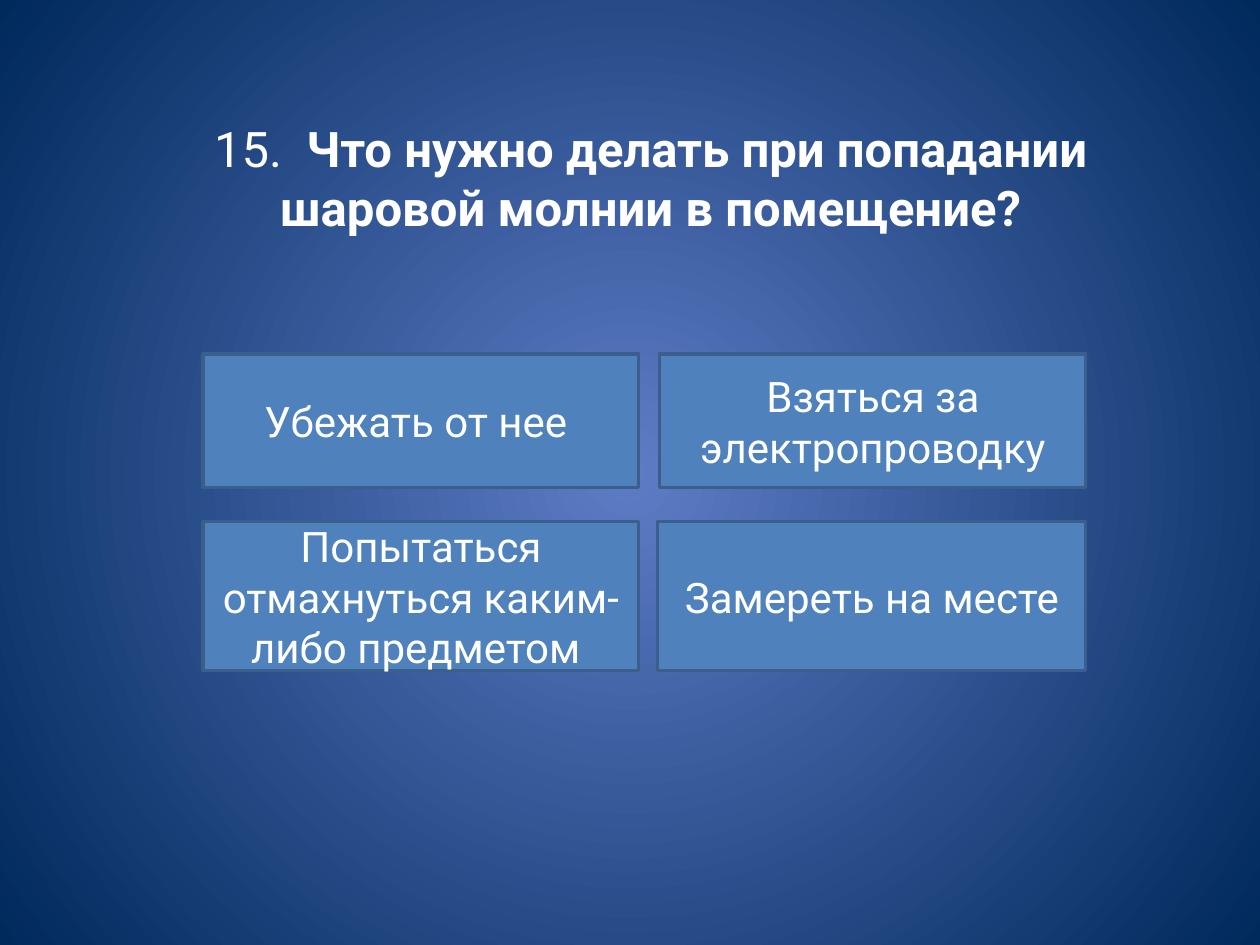
from lxml import etree
from pptx import Presentation
from pptx.dml.color import RGBColor
from pptx.enum.shapes import MSO_SHAPE
from pptx.enum.text import MSO_ANCHOR, PP_ALIGN
from pptx.oxml.ns import qn
from pptx.util import Emu, Pt

RECTANGLE = MSO_SHAPE.RECTANGLE
MIDDLE = MSO_ANCHOR.MIDDLE
CENTER = PP_ALIGN.CENTER

EMU_PER_PX = 914400 / 126
COLORS = {
    "glow": "5E7CC5",
    "edge": "00295C",
    "answer": "4F81BD",
    "border": "3A5F8C",
    "text": "FFFFFF",
}


def px(length):
    return Emu(round(length * EMU_PER_PX))


def rgb(key):
    return RGBColor.from_string(COLORS[key])


class QuizSlide:
    font = "Roboto"
    border_width = Pt(1.75)

    def __init__(self, deck):
        self.slide = deck.slides.add_slide(deck.slide_layouts[6])

    def background(self, center, edge):
        """Fill the slide with a gradient that spreads in circles from its middle."""
        fill = self.slide.background.fill
        fill.gradient()
        for stop, key in zip(fill.gradient_stops, (center, edge)):
            stop.color.rgb = rgb(key)
        gradient = self.slide.element.find(".//" + qn("a:gradFill"))
        gradient.remove(gradient.find(qn("a:lin")))
        circle = etree.SubElement(gradient, qn("a:path"), {"path": "circle"})
        etree.SubElement(circle, qn("a:fillToRect"), dict.fromkeys("ltrb", "50000"))

    def add_text(self, frame, size, runs):
        """Put (text, bold) runs into one centred paragraph."""
        frame.word_wrap = True
        frame.vertical_anchor = MIDDLE
        paragraph = frame.paragraphs[0]
        paragraph.alignment = CENTER
        for text, bold in runs:
            run = paragraph.add_run()
            run.text = text
            style = {"name": self.font, "size": Pt(size), "bold": bold}
            for attribute, value in style.items():
                setattr(run.font, attribute, value)
            run.font.color.rgb = rgb("text")

    def question(self, box, runs):
        title = self.slide.shapes.add_textbox(*map(px, box))
        self.add_text(title.text_frame, 28, runs)

    def answer(self, box, text):
        button = self.slide.shapes.add_shape(RECTANGLE, *map(px, box))
        button.shadow.inherit = False
        button.fill.solid()
        button.fill.fore_color.rgb = rgb("answer")
        button.line.color.rgb = rgb("border")
        button.line.width = self.border_width
        self.add_text(button.text_frame, 24, [(text, False)])


def main():
    deck = Presentation()
    deck.slide_width, deck.slide_height = px(1260), px(945)

    quiz = QuizSlide(deck)
    quiz.background("glow", "edge")
    quiz.question(
        (115, 76, 1071, 203),
        [("15. ", False),
         (" Что нужно делать при попадании шаровой молнии в помещение?", True)],
    )

    left, right_edge = 203, 1086
    left_width = 436
    # top, height, left of the second answer, the two answers
    rows = [
        (354, 134, 660, "Убежать от нее ", "Взяться за электропроводку"),
        (522, 149, 658, "Попытаться отмахнуться каким-либо предметом ",
         "Замереть на месте"),
    ]
    for top, height, second_left, first, second in rows:
        quiz.answer((left, top, left_width, height), first)
        quiz.answer((second_left, top, right_edge - second_left, height), second)

    deck.save("out.pptx")


if __name__ == "__main__":
    main()
